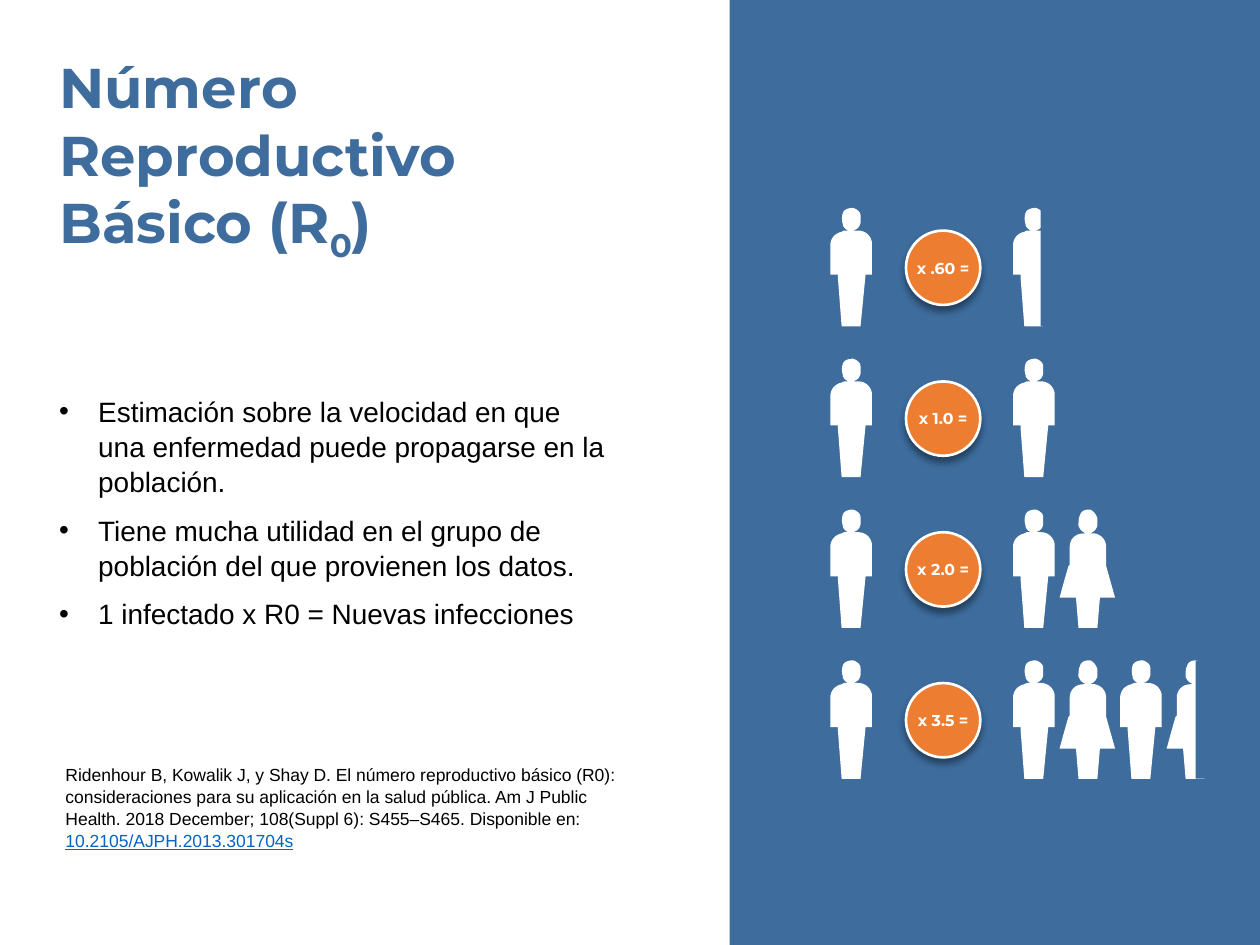
from lxml.etree import SubElement
from pptx import Presentation
from pptx.dml.color import RGBColor
from pptx.enum.shapes import MSO_SHAPE as Shape
from pptx.enum.text import MSO_ANCHOR as Anchor, PP_ALIGN as Align
from pptx.oxml.ns import qn
from pptx.util import Emu, Inches, Pt

BLUE, ORANGE, WHITE, BLACK, LINK = "3D6C9D", "ED7D31", "FFFFFF", "000000", "0563C1"
TOP, ROW_STEP, HEIGHT = 1.65, 1.197, 0.94
SOURCE_X, FACTOR_X, RESULT_X, PAIR_STEP = 6.59, 7.19, 8.04, 0.85
WOMAN_SHIFT = 0.37

# Two numbers are a straight step, six are a Bezier step.
MAN = [(.09, .94), (.06, .55), (.06, .53), (0, .53), (0, .3),
       (0, .24, .04, .2, .09, .19), (.11, .18), (.15, .18),
       (.13, .18, .11, .16, .1, .14), (.1, .13),
       (.09, .1, .09, .07, .1, .04), (.11, .01, .15, 0, .18, 0),
       (.21, .01, .24, .03, .24, .06), (.24, .12),
       (.23, .16, .21, .17, .18, .18), (.22, .18),
       (.28, .18, .32, .22, .33, .27), (.33, .53), (.28, .53), (.24, .94)]
WOMAN = [(.15, .94), (.13, .7), (0, .7), (.03, .59), (.07, .45), (.08, .44), (.08, .3),
         (.08, .24, .12, .19, .19, .19), (.21, .19),
         (.19, .18, .17, .17, .16, .15), (.15, .13),
         (.15, .1, .15, .07, .16, .05), (.17, .01, .2, 0, .24, 0),
         (.27, .01, .29, .04, .3, .07), (.3, .13),
         (.29, .16, .27, .18, .24, .19), (.28, .19),
         (.33, .2, .37, .24, .37, .3), (.37, .45), (.44, .7), (.32, .7), (.3, .94)]

# Factor label, number of people in the result, left edge of the cover on the last one.
ROWS = [("x .60 =", 1, 8.26), ("x 1.0 =", 1, None),
        ("x 2.0 =", 2, None), ("x 3.5 =", 4, 9.49)]

BULLETS = [
    "Estimación sobre la velocidad en que una enfermedad puede propagarse en la población.",
    "Tiene mucha utilidad en el grupo de población del que provienen los datos.",
    "1 infectado x R0 = Nuevas infecciones",
]
REFERENCE = ("Ridenhour B, Kowalik J, y Shay D. El número reproductivo básico (R0): "
             "consideraciones para su aplicación en la salud pública. Am J Public Health. "
             "2018 December; 108(Suppl 6): S455–S465. Disponible en: ")


def color(value):
    """Turn a hex string into a colour."""
    return RGBColor.from_string(value)


def paint(sp, fill):
    """Give a shape a flat fill without line or shadow."""
    sp.shadow.inherit = False
    sp.fill.solid()
    sp.fill.fore_color.rgb = color(fill)
    sp.line.fill.background()


def add_block(s, x, y, w, h, fill, kind=Shape.RECTANGLE):
    """Add a flat preset shape."""
    sp = s.shapes.add_shape(kind, *map(Inches, (x, y, w, h)))
    paint(sp, fill)
    return sp


def clear_margins(tf):
    """Remove the inner margins of a text frame."""
    tf.margin_left = tf.margin_right = tf.margin_top = tf.margin_bottom = 0


def add_text(s, x, y, w, h):
    """Add an empty wrapping text box and return its frame."""
    tf = s.shapes.add_textbox(*map(Inches, (x, y, w, h))).text_frame
    tf.word_wrap = True
    clear_margins(tf)
    return tf


def add_run(p, text, size, font="Arial", fill=BLACK, bold=False):
    """Add a formatted run to a paragraph."""
    r = p.add_run()
    r.text = text
    r.font.size, r.font.name, r.font.bold = Pt(size), font, bold
    r.font.color.rgb = color(fill)
    return r


def set_bullet(p):
    """Give a paragraph a hanging round bullet."""
    pPr = p._p.get_or_add_pPr()
    pPr.set("marL", str(Inches(0.31)))
    pPr.set("indent", str(-Inches(0.31)))
    SubElement(pPr, qn("a:buFont"), typeface="Arial")
    SubElement(pPr, qn("a:buChar"), char="•")


def outline(steps, samples=8):
    """Yield the points of an outline, with its curves sampled."""
    last = steps[0]
    for step in steps:
        if len(step) == 2:
            yield step
        else:
            nodes = [last, step[:2], step[2:4], step[4:]]
            for i in range(1, samples + 1):
                t = i / samples
                weights = ((1 - t) ** 3, 3 * t * (1 - t) ** 2, 3 * t * t * (1 - t), t ** 3)
                yield tuple(sum(k * n[axis] for k, n in zip(weights, nodes)) for axis in (0, 1))
        last = step[-2:]


def add_person(s, x, y, steps):
    """Add a white person whose outline starts at the given corner."""
    points = [(Inches(x + dx), Inches(y + dy)) for dx, dy in outline(steps)]
    builder = s.shapes.build_freeform(*points[0])
    builder.add_line_segments(points[1:], close=True)
    paint(builder.convert_to_shape(), WHITE)


def add_factor(s, y, text):
    """Add the shaded circle that holds a multiplication factor."""
    sp = add_block(s, FACTOR_X, y, 0.59, 0.59, ORANGE, Shape.OVAL)
    sp.line.color.rgb = color(WHITE)
    sp.line.width = Pt(1.5)
    effects = sp._element.spPr.find(qn("a:effectLst"))
    shadow = SubElement(effects, qn("a:outerShdw"), blurRad=str(Pt(4)), dist=str(Pt(3)),
                        dir="5400000", algn="t", rotWithShape="0")
    tint = SubElement(shadow, qn("a:srgbClr"), val=BLACK)
    SubElement(tint, qn("a:alpha"), val="40000")
    tf = sp.text_frame
    clear_margins(tf)
    tf.word_wrap = True
    tf.vertical_anchor = Anchor.MIDDLE
    p = tf.paragraphs[0]
    p.alignment = Align.CENTER
    add_run(p, text, 9, "Montserrat", WHITE, True)


def add_row(s, y, label, people, cover_x):
    """Add one case: a person, a factor and the people infected."""
    add_person(s, SOURCE_X, y, MAN)
    add_factor(s, y + 0.18, label)
    for i in range(people):
        pair, is_woman = divmod(i, 2)
        x = RESULT_X + pair * PAIR_STEP + is_woman * WOMAN_SHIFT
        add_person(s, x, y, WOMAN if is_woman else MAN)
    if cover_x:
        add_block(s, cover_x, y, 0.33, HEIGHT, BLUE)


def add_title(s):
    """Add the title with its subscript."""
    p = add_text(s, 0.47, 0.42, 4.71, 1.62).paragraphs[0]
    for text in ("Número Reproductivo Básico (R", "0", ")"):
        r = add_run(p, text, 32, "Montserrat", BLUE, True)
        if text == "0":
            r.font._element.set("baseline", "-25000")


def add_bullets(s):
    """Add the bulleted explanation."""
    tf = add_text(s, 0.47, 3.12, 4.4, 1.84)
    for i, text in enumerate(BULLETS):
        p = tf.add_paragraph() if i else tf.paragraphs[0]
        p.line_spacing = 1.04
        p.space_before = Pt(8 if i else 0)
        set_bullet(p)
        add_run(p, text, 16)


def add_reference(s):
    """Add the literature reference."""
    p = add_text(s, 0.52, 6.06, 4.53, 0.67).paragraphs[0]
    p.line_spacing = 1.04
    add_run(p, REFERENCE, 10)
    add_run(p, "10.2105/AJPH.2013.301704s", 10, fill=LINK).font.underline = True


def main():
    """Build and save the slide."""
    prs = Presentation()
    prs.slide_width, prs.slide_height = Inches(10), Inches(7.5)
    s = prs.slides.add_slide(prs.slide_layouts[6])
    add_block(s, 5.79, 0, 4.21, 7.5, BLUE)
    add_title(s)
    add_bullets(s)
    for i, row in enumerate(ROWS):
        add_row(s, TOP + i * ROW_STEP, *row)
    add_reference(s)
    prs.save("out.pptx")


main()
